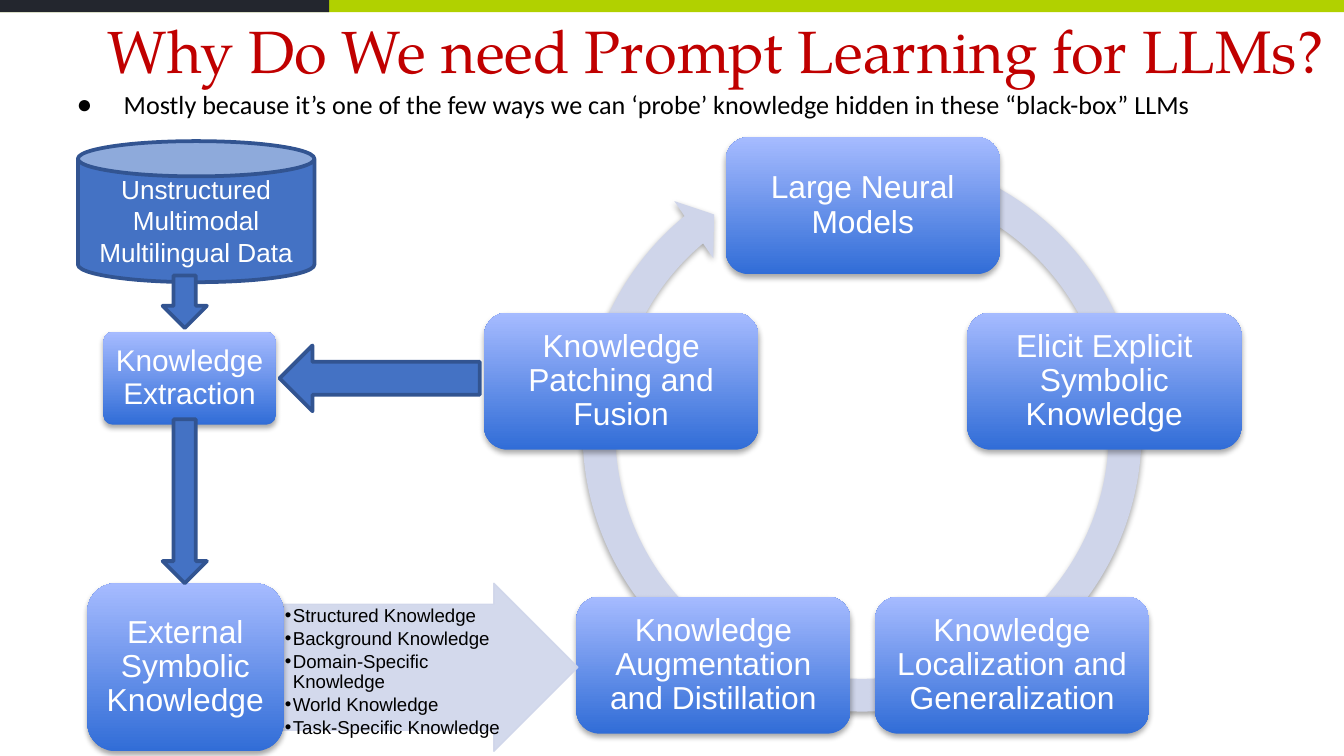
"""Build a slide on why prompt learning is needed for large language models."""
from math import cos, radians, sin

from lxml.etree import SubElement
from pptx import Presentation
from pptx.dml.color import RGBColor
from pptx.enum.shapes import MSO_SHAPE as Shape
from pptx.enum.text import MSO_ANCHOR as Anchor, MSO_AUTO_SIZE as AutoSize, PP_ALIGN as Align
from pptx.oxml.ns import qn
from pptx.util import Inches, Pt

BLACK = RGBColor(0x00, 0x00, 0x00)
WHITE = RGBColor(0xFF, 0xFF, 0xFF)
RED = RGBColor(0xC0, 0x00, 0x00)
LIME = RGBColor(0xB1, 0xD1, 0x00)
CHARCOAL = RGBColor(0x23, 0x26, 0x2E)
BLUE = RGBColor(0x44, 0x72, 0xC4)
DARK_BLUE = RGBColor(0x32, 0x54, 0x91)
DEEP_BLUE = RGBColor(0x31, 0x6D, 0xD7)
PALE_BLUE = RGBColor(0xA6, 0xBB, 0xFF)
MIST = RGBColor(0xCF, 0xD5, 0xEA)

CYCLE_CENTER = (6.42, 3.42)
CYCLE_RADIUS = 1.89
STEP_WIDTH, STEP_HEIGHT = 2.04, 1.02
CYCLE_STEPS = [
    "Large Neural Models",
    "Elicit Explicit Symbolic Knowledge",
    "Knowledge Localization and Generalization",
    "Knowledge Augmentation and Distillation",
    "Knowledge Patching and Fusion",
]
KNOWLEDGE_KINDS = [
    "Structured Knowledge",
    "Background Knowledge",
    "Domain-Specific Knowledge",
    "World Knowledge",
    "Task-Specific Knowledge",
]
REASON = ("Mostly because it’s one of the few ways we can ‘probe’ knowledge "
          "hidden in these “black-box” LLMs")


def add_bullet(paragraph, character, margin, hanging):
    """Give a paragraph a black bullet and a hanging indent."""
    properties = paragraph._p.get_or_add_pPr()
    properties.set("marL", str(Inches(margin)))
    properties.set("indent", str(-Inches(hanging)))
    color = SubElement(properties, qn("a:buClr"))
    SubElement(color, qn("a:srgbClr"), val=str(BLACK))
    SubElement(properties, qn("a:buFont"), typeface="Arial")
    SubElement(properties, qn("a:buChar"), char=character)


def write_text(shape, *lines, size, color=WHITE, font="Arial", align=Align.CENTER,
               anchor=Anchor.MIDDLE, insets=(0.1, 0.05), line_spacing=None,
               space_after=0, bullet=None):
    """Fill a shape with formatted paragraphs."""
    frame = shape.text_frame
    frame.word_wrap = True
    frame.auto_size = AutoSize.NONE
    frame.vertical_anchor = anchor
    frame.margin_left = frame.margin_right = Inches(insets[0])
    frame.margin_top = frame.margin_bottom = Inches(insets[1])
    for index, line in enumerate(lines):
        paragraph = frame.add_paragraph() if index else frame.paragraphs[0]
        paragraph.text = line
        paragraph.alignment = align
        paragraph.line_spacing = line_spacing
        paragraph.space_after = Pt(space_after)
        if bullet:
            add_bullet(paragraph, *bullet)
        paragraph.font.size = Pt(size)
        paragraph.font.name = font
        paragraph.font.color.rgb = color


def add_shape(slide, kind, box, fill=None, line=None, line_width=2):
    """Add a preset shape without a shadow."""
    shape = slide.shapes.add_shape(kind, *map(Inches, box))
    shape.shadow.inherit = False
    if fill is not None:
        shape.fill.solid()
        shape.fill.fore_color.rgb = fill
    if line is None:
        shape.line.fill.background()
    else:
        shape.line.color.rgb = line
        shape.line.width = Pt(line_width)
    return shape


def add_soft_shadow(shape):
    """Drop a faint shadow straight below a shape."""
    effects = shape._element.spPr.find(qn("a:effectLst"))
    shadow = SubElement(effects, qn("a:outerShdw"), blurRad=str(Pt(3.1)),
                        dist=str(Pt(1.8)), dir="5400000", rotWithShape="0")
    color = SubElement(shadow, qn("a:srgbClr"), val=str(BLACK))
    SubElement(color, qn("a:alpha"), val="35000")


def add_step(slide, text, box, size=17, corner=0.17):
    """Add a rounded gradient box with a label."""
    step = add_shape(slide, Shape.ROUNDED_RECTANGLE, box)
    step.adjustments[0] = corner
    step.fill.gradient()
    step.fill.gradient_angle = 90
    for stop, color in zip(step.fill.gradient_stops, (DEEP_BLUE, PALE_BLUE)):
        stop.color.rgb = color
    add_soft_shadow(step)
    write_text(step, text, size=size, insets=(0.06, 0.04), line_spacing=0.9)


def add_cycle(slide):
    """Add the ring arrow and its evenly spaced steps."""
    ring = add_shape(slide, Shape.CIRCULAR_ARROW, (4.2, 1, 4.43, 4.43), MIST)
    for index, value in enumerate((0.055, 3.307, 138.152, 173.621, 0.058)):
        ring.adjustments[index] = value
    add_soft_shadow(ring)
    for index, text in enumerate(CYCLE_STEPS):
        angle = radians(index * 360 / len(CYCLE_STEPS))
        left = CYCLE_CENTER[0] + CYCLE_RADIUS * sin(angle) - STEP_WIDTH / 2
        top = CYCLE_CENTER[1] - CYCLE_RADIUS * cos(angle) - STEP_HEIGHT / 2
        add_step(slide, text, (left, top, STEP_WIDTH, STEP_HEIGHT))


def add_knowledge_arrow(slide):
    """Add the translucent arrow that lists the kinds of knowledge."""
    arrow = add_shape(slide, Shape.RIGHT_ARROW, (2.11, 4.34, 2.19, 1.25), MIST, MIST, 0.75)
    arrow.adjustments[0] = 0.75
    for color in arrow._element.spPr.iter(qn("a:srgbClr")):
        SubElement(color, qn("a:alpha"), val="90000")
    kinds = slide.shapes.add_textbox(*map(Inches, (2.11, 4.5, 1.72, 0.93)))
    write_text(kinds, *KNOWLEDGE_KINDS, size=10, color=BLACK, align=Align.LEFT,
               anchor=Anchor.TOP, insets=(0.01, 0.01), line_spacing=0.9,
               space_after=1.5, bullet=("•", 0.06, 0.06))


def add_extraction_flow(slide):
    """Add the path from raw data to external knowledge."""
    add_step(slide, "External Symbolic Knowledge", (0.65, 4.34, 1.46, 1.25))
    data = add_shape(slide, Shape.CAN, (0.58, 1.05, 1.76, 1.05), BLUE, DARK_BLUE)
    write_text(data, "Unstructured Multimodal Multilingual Data", size=14)
    add_step(slide, "Knowledge Extraction", (0.77, 2.47, 1.28, 0.69), size=16, corner=0.1)
    for kind, box in (
        (Shape.DOWN_ARROW, (1.21, 2.05, 0.33, 0.39)),
        (Shape.LEFT_ARROW, (2.08, 2.57, 1.49, 0.49)),
        (Shape.DOWN_ARROW, (1.21, 3.12, 0.33, 1.22)),
    ):
        add_shape(slide, kind, box, BLUE, DARK_BLUE)


def add_heading(slide):
    """Set the title and the sentence below it."""
    title = slide.shapes.title
    title.left, title.top, title.width, title.height = map(Inches, (0.58, -0.1, 9.5, 0.94))
    write_text(title, "Why Do We need Prompt Learning for LLMs?", size=32,
               color=RED, font="TeX Gyre Pagella")
    reason = slide.shapes.add_textbox(*map(Inches, (0.35, 0.59, 9.48, 0.4)))
    write_text(reason, REASON, size=14, color=BLACK, font="Calibri", align=Align.LEFT,
               anchor=Anchor.TOP, insets=(0.07, 0.07), bullet=("●", 0.5, 0.35))


def main():
    """Build and save the presentation."""
    presentation = Presentation()
    presentation.slide_width = Inches(10)
    presentation.slide_height = Inches(10 * 9 / 16)
    slide = presentation.slides.add_slide(presentation.slide_layouts[5])
    add_shape(slide, Shape.RECTANGLE, (0, 0, 10, 0.09), LIME)
    add_shape(slide, Shape.RECTANGLE, (0, 0, 2.45, 0.09), CHARCOAL)
    add_cycle(slide)
    add_knowledge_arrow(slide)
    add_extraction_flow(slide)
    add_heading(slide)
    presentation.save("out.pptx")


if __name__ == "__main__":
    main()
